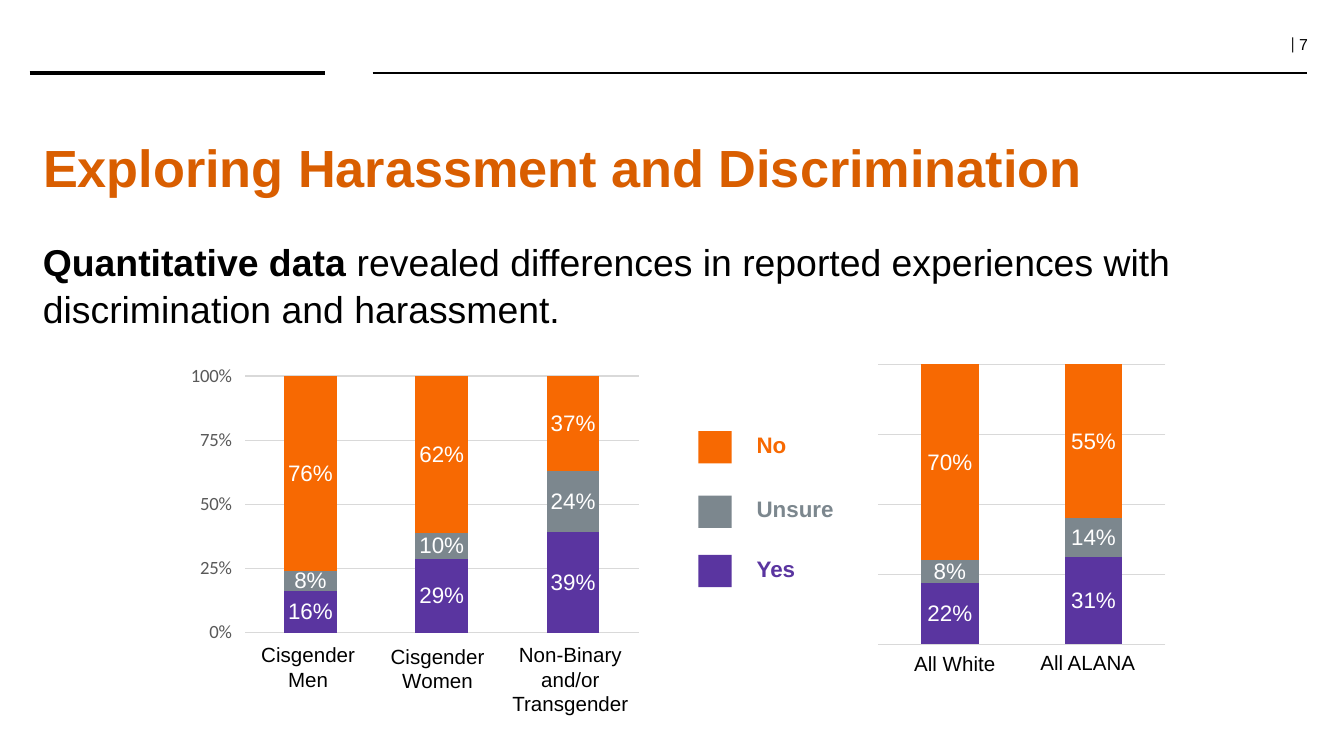
from lxml import etree
from pptx import Presentation
from pptx.chart.data import CategoryChartData
from pptx.dml.color import RGBColor
from pptx.enum.chart import XL_CHART_TYPE as ChartType
from pptx.enum.chart import XL_LABEL_POSITION as LabelPosition
from pptx.enum.chart import XL_TICK_MARK as TickMark
from pptx.enum.shapes import MSO_CONNECTOR as Connector
from pptx.enum.shapes import MSO_SHAPE as Shape
from pptx.enum.text import MSO_ANCHOR as Anchor
from pptx.enum.text import MSO_AUTO_SIZE as AutoSize
from pptx.enum.text import PP_ALIGN as Align
from pptx.oxml import parse_xml
from pptx.oxml.ns import nsdecls, qn
from pptx.util import Cm, Pt

COLORS = {
    "black": "000000", "white": "FFFFFF", "title": "D95E00",
    "Yes": "5A35A0", "Unsure": "7C878E", "No": "F76902",
    "grid": "D9D9D9", "tick": "595959",
}
RGB = {name: RGBColor.from_string(value) for name, value in COLORS.items()}


def write_text(box, runs, align=Align.LEFT):
    """Write one paragraph; each run is (text, size, font, color, bold)."""
    frame = box.text_frame
    frame.word_wrap = True
    frame.vertical_anchor = Anchor.TOP
    para = frame.paragraphs[0]
    para.alignment = align
    for text, size, font, color, bold in runs:
        span = para.add_run()
        span.text = text
        span.font.size = Pt(size)
        span.font.name = font
        span.font.bold = bold
        span.font.color.rgb = RGB[color]
    return para


def add_stacked_chart(page, frame, plot_area, categories, answers, show_axis):
    """Add a 100% stacked column chart with a fixed inner plot area."""
    data = CategoryChartData(number_format="0%")
    data.categories = categories
    for answer, shares in answers.items():
        data.add_series(answer, shares)
    chart = page.shapes.add_chart(
        ChartType.COLUMN_STACKED_100, *[Cm(v) for v in frame], data).chart
    chart.has_title = False
    chart.has_legend = False
    chart.font.size = Pt(10)
    chart.font.name = "Arial"
    chart.font.color.rgb = RGB["black"]

    plot = chart.plots[0]
    plot.gap_width = 150
    plot.overlap = 100
    plot.vary_by_categories = False
    for series in plot.series:
        series.format.fill.solid()
        series.format.fill.fore_color.rgb = RGB[series.name]
        labels = series.data_labels
        labels.show_value = True
        labels.position = LabelPosition.CENTER
        labels.number_format = "0%"
        labels.number_format_is_linked = False
        labels.font.size = Pt(12)
        labels.font.name = "Arial"
        labels.font.color.rgb = RGB["white"]

    chart.category_axis.visible = False
    axis = chart.value_axis
    axis.visible = show_axis
    axis.minimum_scale = 0
    axis.maximum_scale = 1
    axis.major_unit = 0.25
    axis.major_tick_mark = TickMark.OUTSIDE
    axis.format.line.fill.background()
    axis.has_major_gridlines = True
    axis.major_gridlines.format.line.color.rgb = RGB["grid"]
    axis.major_gridlines.format.line.width = Pt(0.75)
    axis.tick_labels.number_format = "0%"
    axis.tick_labels.number_format_is_linked = False
    axis.tick_labels.font.size = Pt(10)
    axis.tick_labels.font.name = "Calibri"
    axis.tick_labels.font.color.rgb = RGB["tick"]

    area = chart.element.xpath("c:chart/c:plotArea")[0]
    for old_layout in area.findall(qn("c:layout")):
        area.remove(old_layout)
    x, y, width, height = plot_area
    area.insert(0, parse_xml(
        f'<c:layout {nsdecls("c")}><c:manualLayout><c:layoutTarget val="inner"/>'
        f'<c:xMode val="edge"/><c:yMode val="edge"/><c:x val="{x}"/><c:y val="{y}"/>'
        f'<c:w val="{width}"/><c:h val="{height}"/></c:manualLayout></c:layout>'))


deck = Presentation()
deck.slide_width, deck.slide_height = Cm(25.4), Cm(14.29)
page = deck.slides.add_slide(deck.slide_layouts[5])

# Page number and header rules
number = page.shapes.add_textbox(Cm(22.38), Cm(0.58), Cm(2.59), Cm(0.56))
para = write_text(number, [("| ", 9, "Cambria", "black", False),
                           ("7", 8.5, "Arial", "black", False)], Align.RIGHT)
para.line_spacing = 0.8
for start, end, weight in [(0.56, 6.15, 2), (7.04, 24.71, 1)]:
    rule = page.shapes.add_connector(
        Connector.STRAIGHT, Cm(start), Cm(1.38), Cm(end), Cm(1.38))
    rule.line.color.rgb = RGB["black"]
    rule.line.width = Pt(weight)
    etree.SubElement(rule.element.spPr, qn("a:effectLst"))

# Title and statement
title = page.shapes.title
title.left, title.top, title.width, title.height = Cm(0.56), Cm(2.34), Cm(24.16), Cm(1.45)
write_text(title, [("Exploring Harassment and Discrimination", 28, "Arial", "title", True)])
title.text_frame.auto_size = AutoSize.NONE
statement = page.shapes.add_textbox(Cm(0.56), Cm(4.27), Cm(24.16), Cm(5.26))
para = write_text(statement, [
    ("Quantitative data ", 20, "Arial", "black", True),
    ("revealed differences in reported experiences with "
     "discrimination and harassment.", 20, "Arial", "black", False)])
para.line_spacing = 1.05
for box in (title, statement):
    box.text_frame.margin_top = Cm(0.21)

# Charts by gender and by race
add_stacked_chart(
    page, (3.43, 6.81, 8.81, 5.46), (0.136, 0.055, 0.845, 0.888),
    ["Cisgender Men", "Cisgender Women", "Non-Binary and/or Transgender"],
    {"Yes": (0.16, 0.29, 0.39), "Unsure": (0.08, 0.10, 0.24), "No": (0.76, 0.62, 0.37)},
    show_axis=True)
add_stacked_chart(
    page, (16.48, 6.78, 5.66, 5.51), (0.02, 0.02, 0.96, 0.96),
    ["All White", "All ALANA"],
    {"Yes": (0.22, 0.31), "Unsure": (0.08, 0.14), "No": (0.70, 0.55)},
    show_axis=False)

# Column captions
for caption, left, top, width, height in [
    ("Cisgender Men", 4.39, 12.01, 2.87, 1.19),
    ("Cisgender Women", 6.58, 12.04, 3.38, 1.19),
    ("Non-Binary and/or Transgender", 9.09, 12.01, 3.38, 1.68),
    ("All White", 16.61, 12.19, 2.87, 0.74),
    ("All ALANA", 18.87, 12.17, 3.38, 0.74),
]:
    box = page.shapes.add_textbox(Cm(left), Cm(top), Cm(width), Cm(height))
    write_text(box, [(caption, 11, "Arial", "black", False)], Align.CENTER)

# Shared legend
for answer, top in [("No", 8.15), ("Unsure", 9.37), ("Yes", 10.49)]:
    swatch = page.shapes.add_shape(Shape.RECTANGLE, Cm(13.2), Cm(top), Cm(0.63), Cm(0.61))
    swatch.shadow.inherit = False
    swatch.fill.solid()
    swatch.fill.fore_color.rgb = RGB[answer]
    swatch.line.fill.background()
    box = page.shapes.add_textbox(Cm(14.05), Cm(top - 0.13), Cm(2.92), Cm(0.76))
    write_text(box, [(answer, 12, "Arial", answer, True)])

deck.save("out.pptx")
